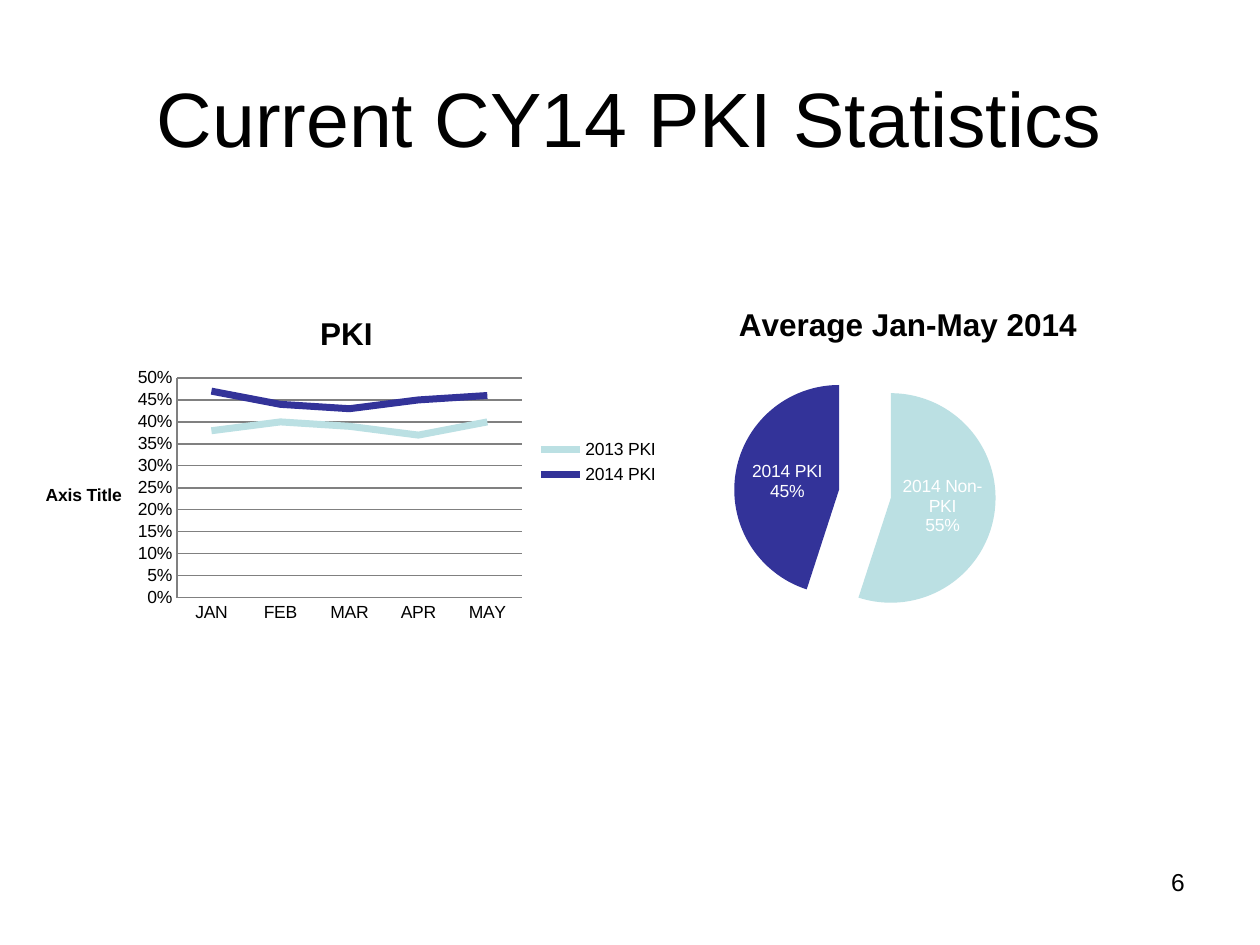
"""Build the CY14 PKI statistics slide with a trend chart and an average pie."""
from lxml import etree
from pptx import Presentation
from pptx.chart.data import CategoryChartData
from pptx.dml.color import RGBColor
from pptx.enum.chart import (XL_CHART_TYPE, XL_LABEL_POSITION, XL_LEGEND_POSITION,
                             XL_MARKER_STYLE, XL_TICK_MARK)
from pptx.enum.text import MSO_ANCHOR, PP_ALIGN
from pptx.oxml.ns import qn
from pptx.util import Emu, Pt

BLACK = RGBColor(0x00, 0x00, 0x00)
WHITE = RGBColor(0xFF, 0xFF, 0xFF)
GRAY = RGBColor(0x80, 0x80, 0x80)
AQUA = RGBColor(0xBB, 0xE0, 0xE3)
INDIGO = RGBColor(0x33, 0x33, 0x99)
COLORS = (AQUA, INDIGO)

LINE, PIE = XL_CHART_TYPE.LINE, XL_CHART_TYPE.PIE
LABEL_CENTER = XL_LABEL_POSITION.CENTER
LEGEND_RIGHT = XL_LEGEND_POSITION.RIGHT
NO_MARKER = XL_MARKER_STYLE.NONE
NO_TICK = XL_TICK_MARK.NONE
MIDDLE = MSO_ANCHOR.MIDDLE
CENTER, RIGHT = PP_ALIGN.CENTER, PP_ALIGN.RIGHT

FONT = "Arial"
EMU_PER_PX = 914400 / 126
TITLE_ONLY = 5


def px(length):
    """Turn pixels into EMU."""
    return Emu(round(length * EMU_PER_PX))


def style_font(font, size, color=BLACK, bold=False):
    """Give a font its face, size, colour and weight."""
    font.name, font.size, font.bold = FONT, Pt(size), bold
    font.color.rgb = color


def add_value(parent, tag, value):
    """Append a chart element that carries one val attribute."""
    etree.SubElement(parent, qn(tag)).set("val", str(value))


class SlideBuilder:
    """Hold the presentation and current slide and add styled elements."""

    def __init__(self, width, height):
        self.deck = Presentation()
        self.deck.slide_width, self.deck.slide_height = px(width), px(height)
        self.slide = self.deck.slides.add_slide(self.deck.slide_layouts[TITLE_ONLY])

    def set_line(self, shape, text, size, align):
        """Set one line of text in a shape."""
        shape.text_frame.text = text
        shape.text_frame.word_wrap = True
        paragraph = shape.text_frame.paragraphs[0]
        paragraph.alignment = align
        style_font(paragraph.runs[0].font, size)

    def title(self, text, left, top, width, height):
        """Place and fill the title placeholder."""
        heading = self.slide.shapes.title
        heading.left, heading.top = px(left), px(top)
        heading.width, heading.height = px(width), px(height)
        self.set_line(heading, text, 44, CENTER)
        heading.text_frame.vertical_anchor = MIDDLE

    def page_number(self, text, left, top, width, height):
        """Add the right-aligned page number."""
        box = self.slide.shapes.add_textbox(px(left), px(top), px(width), px(height))
        self.set_line(box, text, 14, RIGHT)

    def chart(self, kind, title, categories, series, box, plot):
        """Add a titled chart whose plot area has a box in px within the chart."""
        data = CategoryChartData(number_format="0%")
        data.categories = categories
        for name, values in series:
            data.add_series(name, values)
        chart = self.slide.shapes.add_chart(kind, *map(px, box), data).chart
        style_font(chart.font, 10)
        chart.has_legend = False
        chart.has_title = True
        chart.chart_title.text_frame.text = title
        style_font(chart.chart_title.text_frame.paragraphs[0].runs[0].font, 18, bold=True)
        chart.plots[0].vary_by_categories = kind == PIE
        self.place_plot(chart, box, plot)
        return chart

    def place_plot(self, chart, box, plot):
        """Fix the inner plot area by fractions of the chart size."""
        area = chart.element.find(".//" + qn("c:plotArea"))
        for old in area.findall(qn("c:layout")):
            area.remove(old)
        layout = etree.Element(qn("c:layout"))
        area.insert(0, layout)
        manual = etree.SubElement(layout, qn("c:manualLayout"))
        add_value(manual, "c:layoutTarget", "inner")
        add_value(manual, "c:xMode", "edge")
        add_value(manual, "c:yMode", "edge")
        for index, side in enumerate("xywh"):
            add_value(manual, f"c:{side}", plot[index] / box[2 + index % 2])

    def line_chart(self, title, axis_title, categories, series, box, plot):
        """Add a line chart with a percent axis and a legend."""
        chart = self.chart(LINE, title, categories, series, box, plot)
        chart.has_legend = True
        chart.legend.position = LEGEND_RIGHT
        chart.legend.include_in_layout = False
        style_font(chart.legend.font, 10)
        values = chart.value_axis
        values.minimum_scale, values.maximum_scale, values.major_unit = 0, 0.5, 0.05
        values.tick_labels.number_format = "0%"
        values.tick_labels.number_format_is_linked = False
        values.major_gridlines.format.line.color.rgb = GRAY
        for axis in (values, chart.category_axis):
            axis.major_tick_mark = axis.minor_tick_mark = NO_TICK
            axis.format.line.color.rgb = GRAY
            style_font(axis.tick_labels.font, 10)
        caption = values.axis_title.text_frame
        caption.text = axis_title
        style_font(caption.paragraphs[0].runs[0].font, 10, bold=True)
        axis_heading = chart.element.find(f".//{qn('c:valAx')}/{qn('c:title')}")
        body = axis_heading.find(".//" + qn("a:bodyPr"))
        body.set("rot", "0")
        body.set("vert", "horz")
        for line, color in zip(chart.plots[0].series, COLORS):
            line.smooth = False
            line.marker.style = NO_MARKER
            line.format.line.color.rgb = color
            line.format.line.width = Pt(4)

    def pie_chart(self, title, categories, series, box, plot, explosion):
        """Add an exploded pie chart with names and percentages on its slices."""
        chart = self.chart(PIE, title, categories, series, box, plot)
        slices = chart.plots[0].series[0]
        for index, color in enumerate(COLORS):
            fill = slices.points[index].format.fill
            fill.solid()
            fill.fore_color.rgb = color
        burst = etree.Element(qn("c:explosion"))
        burst.set("val", str(explosion))
        chart.element.find(".//" + qn("c:dPt")).addprevious(burst)
        labels = slices.data_labels
        labels.show_category_name = labels.show_percentage = True
        labels.show_value = False
        labels.number_format, labels.number_format_is_linked = "0%", False
        labels.position = LABEL_CENTER
        style_font(labels.font, 10, WHITE)
        separator = etree.Element(qn("c:separator"))
        separator.text = "\n"
        flags = chart.element.find(f".//{qn('c:ser')}/{qn('c:dLbls')}")
        flags.find(qn("c:showBubbleSize")).addnext(separator)


def main():
    """Build and save the slide."""
    page = SlideBuilder(1260, 945)
    page.title("Current CY14 PKI Statistics", 63, 38, 1134, 158)
    page.page_number("6", 903, 861, 294, 66)
    page.line_chart("PKI", "Axis Title", ("JAN", "FEB", "MAR", "APR", "MAY"),
                    (("2013 PKI", (0.38, 0.4, 0.39, 0.37, 0.4)),
                     ("2014 PKI", (0.47, 0.44, 0.43, 0.45, 0.46))),
                    (21, 294, 651, 336), (156, 84, 345, 220))
    page.pie_chart("Average Jan-May 2014", ("2014 Non-PKI", "2014 PKI"),
                   (("Series 1", (55, 45)),),
                   (598, 284, 620, 368), (136, 79, 262, 262), 25)
    page.deck.save("out.pptx")


if __name__ == "__main__":
    main()
